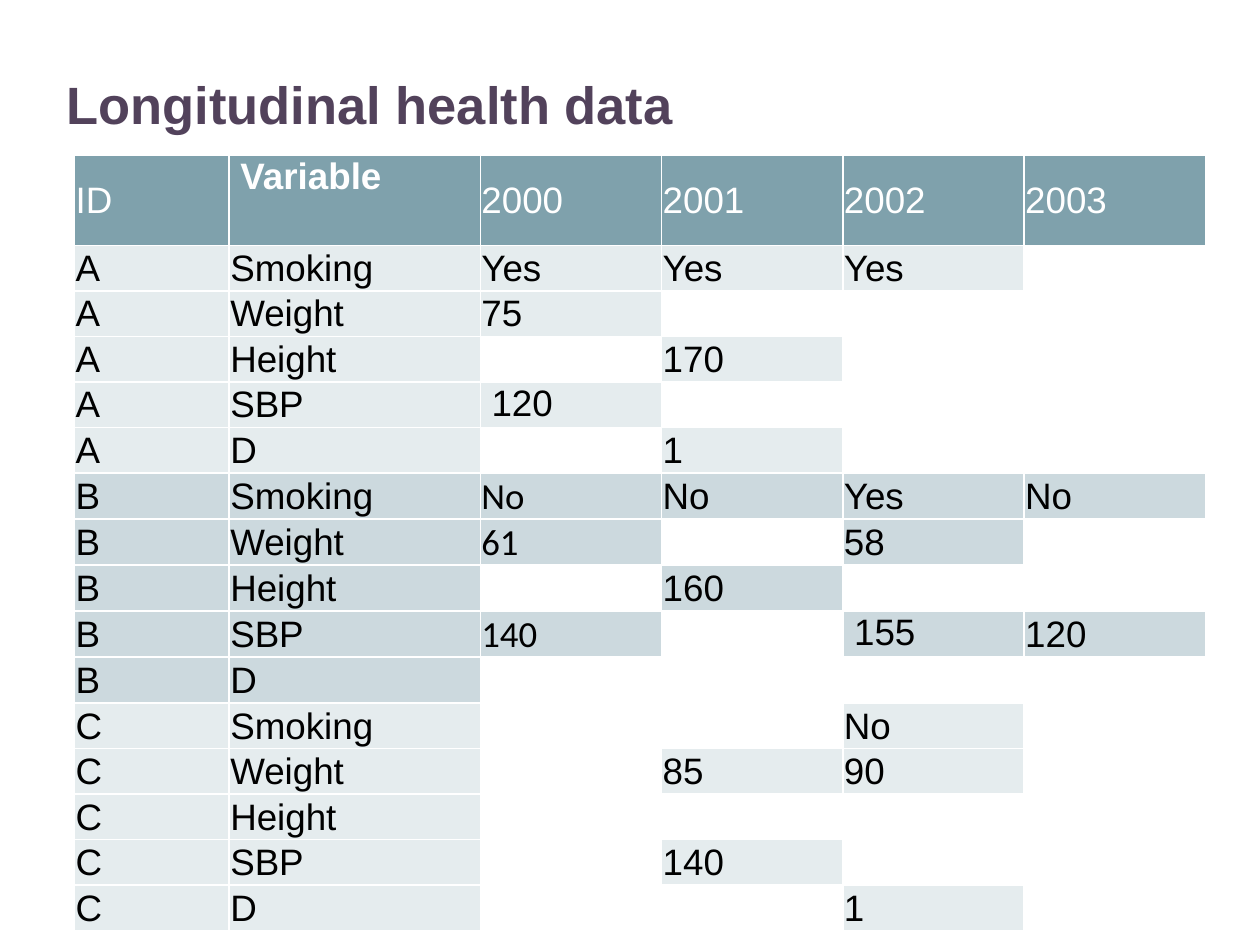
"""Build a slide with a table of longitudinal health data."""
from pptx import Presentation
from pptx.dml.color import RGBColor
from pptx.enum.text import MSO_ANCHOR, PP_ALIGN
from pptx.util import Pt


def color(value):
    return RGBColor.from_string(value)


presentation = Presentation()
presentation.slide_width, presentation.slide_height = Pt(720), Pt(540)
slide = presentation.slides.add_slide(presentation.slide_layouts[5])

title = slide.shapes.title
title.left, title.top, title.width, title.height = Pt(31), Pt(37.5), Pt(648), Pt(90)
title.text_frame.text = "Longitudinal health data"
title.text_frame.vertical_anchor = MSO_ANCHOR.TOP
paragraph = title.text_frame.paragraphs[0]
paragraph.alignment = PP_ALIGN.LEFT
paragraph.font.name = "Arial"
paragraph.font.size = Pt(30)
paragraph.font.bold = True
paragraph.font.color.rgb = color("52425B")

header = ["ID", " Variable", "2000", "2001", "2002", "2003"]
variables = ["Smoking", "Weight", "Height", "SBP", "D"]
measurements = {
    "A": [
        ["Yes", "Yes", "Yes", ""],
        ["75", "", "", ""],
        ["", "170", "", ""],
        [" 120", "", "", ""],
        ["", "1", "", ""],
    ],
    "B": [
        ["No", "No", "Yes", "No"],
        ["61", "", "58", ""],
        ["", "160", "", ""],
        ["140", "", " 155", "120"],
        ["", "", "", ""],
    ],
    "C": [
        ["", "", "No", ""],
        ["", "85", "90", ""],
        ["", "", "", ""],
        ["", "140", "", ""],
        ["", "", "1", ""],
    ],
}
fills = {"ID": "7FA1AC", "A": "E5ECEE", "B": "CCD9DE", "C": "E5ECEE"}
rows = [header] + [
    [person, variable, *values]
    for person, records in measurements.items()
    for variable, values in zip(variables, records)
]
column_widths = [88.3, 143.5] + [103.6] * 4
row_heights = [51.6] + [26] * 15

table = slide.shapes.add_table(
    len(rows), len(header), Pt(42.7), Pt(88.7),
    Pt(sum(column_widths)), Pt(sum(row_heights)),
).table
table.horz_banding = False
for column, width in zip(table.columns, column_widths):
    column.width = Pt(width)

for row_index, values in enumerate(rows):
    table.rows[row_index].height = Pt(row_heights[row_index])
    for column_index, value in enumerate(values):
        cell = table.cell(row_index, column_index)
        cell.margin_left = cell.margin_right = cell.margin_top = Pt(0.6)
        cell.margin_bottom = Pt(0)
        cell.text = value
        if value:
            cell.fill.solid()
            cell.fill.fore_color.rgb = color(fills[values[0]])
        else:
            cell.fill.background()
        is_header = row_index == 0
        is_calibri = values[0] == "B" and column_index == 2
        if is_calibri:
            cell.vertical_anchor = MSO_ANCHOR.BOTTOM
        elif value.startswith(" "):
            cell.vertical_anchor = MSO_ANCHOR.TOP
        else:
            cell.vertical_anchor = MSO_ANCHOR.MIDDLE
        font = cell.text_frame.paragraphs[0].font
        font.name = "Calibri" if is_calibri else "Arial"
        font.size = Pt(21)
        font.bold = is_header and column_index == 1
        font.color.rgb = color("FFFFFF" if is_header else "000000")

presentation.save("out.pptx")
